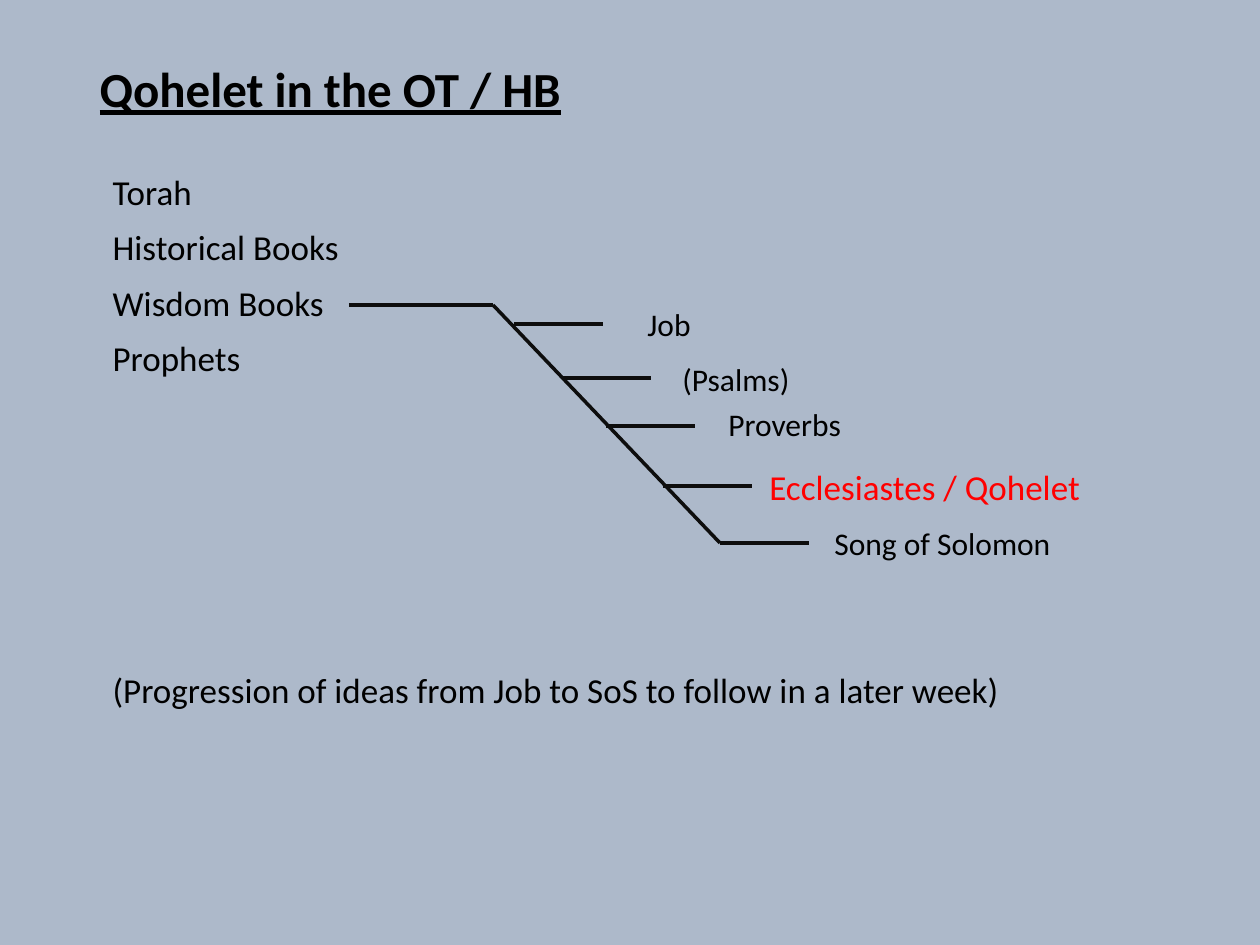
from dataclasses import dataclass

from lxml import etree
from pptx import Presentation
from pptx.dml.color import RGBColor
from pptx.enum import shapes, text
from pptx.oxml import ns
from pptx.util import Emu, Pt

PX_PER_INCH = 126


@dataclass(frozen=True)
class Theme:
    font: str = "Calibri"
    background: str = "ADB9CA"
    ink: str = "000000"
    line: str = "0D0D0D"
    highlight: str = "FF0000"
    title_size: int = 28
    body_size: int = 20
    label_size: int = 18
    line_width: int = 2


THEME = Theme()

SECTIONS = ["Torah", "Historical Books", "Wisdom Books", "Prophets"]
CLOSING_NOTE = "(Progression of ideas from Job to SoS to follow in a later week)"
SECTION_GAP = 10
NOTE_GAP = 168

# Wisdom books: name, branch start (x, y), label corner (x, y), highlighted
BOOKS = [
    ("Job", (514, 324), (635, 299), False),
    ("(Psalms)", (562, 378), (670, 354), False),
    ("Proverbs", (606, 426), (716, 399), False),
    ("Ecclesiastes / Qohelet", (663, 486), (757, 459), True),
    ("Song of Solomon", (720, 543), (822, 518), False),
]
BRANCH_LENGTH = 89
STEM_START, STEM_BEND, STEM_END = (349, 305), (493, 305), (720, 543)


def px(*values):
    return [Emu(round(value * 914400 / PX_PER_INCH)) for value in values]


def apply(target, formats):
    for name, value in formats.items():
        setattr(target, name, value)


def write(paragraph, content, size, color=THEME.ink, **formats):
    run = paragraph.add_run()
    run.text = content
    apply(run.font, {"name": THEME.font, "size": Pt(size), **formats})
    run.font.color.rgb = RGBColor.from_string(color)


def place(shape, left, top, width, height):
    apply(shape, dict(zip(("left", "top", "width", "height"),
                          px(left, top, width, height))))


def add_title(slide, content):
    title = slide.shapes.title
    place(title, 87, 50, 1086, 84)
    apply(title.text_frame, {"vertical_anchor": text.MSO_ANCHOR.MIDDLE,
                             "auto_size": text.MSO_AUTO_SIZE.NONE})
    paragraph = title.text_frame.paragraphs[0]
    apply(paragraph, {"alignment": text.PP_ALIGN.LEFT, "line_spacing": 0.9})
    write(paragraph, content, THEME.title_size, bold=True, underline=True)


def add_body(slide, entries):
    body = slide.placeholders[1]
    place(body, 100, 169, 1143, 748)
    frame = body.text_frame
    frame.auto_size = text.MSO_AUTO_SIZE.NONE
    for index, (content, gap) in enumerate(entries):
        paragraph = frame.add_paragraph() if index else frame.paragraphs[0]
        apply(paragraph, {"line_spacing": 0.9, "space_before": Pt(gap)})
        # Plain lines: no bullet and no hanging indent
        properties = paragraph._p.get_or_add_pPr()
        properties.set("marL", "0")
        properties.set("indent", "0")
        etree.SubElement(properties, ns.qn("a:buNone"))
        write(paragraph, content, THEME.body_size)


def add_line(slide, start, end):
    line = slide.shapes.add_connector(
        shapes.MSO_CONNECTOR.STRAIGHT, *px(*start, *end))
    line.line.color.rgb = RGBColor.from_string(THEME.line)
    line.line.width = Pt(THEME.line_width)
    etree.SubElement(line._element.spPr, ns.qn("a:effectLst"))


def add_label(slide, content, corner, highlighted):
    width, height = (402, 55) if highlighted else (319, 50)
    label = slide.shapes.add_textbox(*px(*corner, width, height))
    apply(label.text_frame, {"word_wrap": True,
                             "auto_size": text.MSO_AUTO_SIZE.SHAPE_TO_FIT_TEXT})
    size, color = ((THEME.body_size, THEME.highlight) if highlighted
                   else (THEME.label_size, THEME.ink))
    write(label.text_frame.paragraphs[0], content, size, color)


def main():
    presentation = Presentation()
    presentation.slide_width, presentation.slide_height = px(1260, 945)
    slide = presentation.slides.add_slide(presentation.slide_layouts[1])
    fill = slide.background.fill
    fill.solid()
    fill.fore_color.rgb = RGBColor.from_string(THEME.background)

    # Title and list of sections
    add_title(slide, "Qohelet in the OT / HB")
    add_body(slide, [(section, SECTION_GAP) for section in SECTIONS]
             + [(CLOSING_NOTE, NOTE_GAP)])

    # Stem from "Wisdom Books", then one branch and label per book
    add_line(slide, STEM_START, STEM_BEND)
    add_line(slide, STEM_BEND, STEM_END)
    for name, (x, y), corner, highlighted in BOOKS:
        add_line(slide, (x, y), (x + BRANCH_LENGTH, y))
        add_label(slide, name, corner, highlighted)

    presentation.save("out.pptx")


if __name__ == "__main__":
    main()
